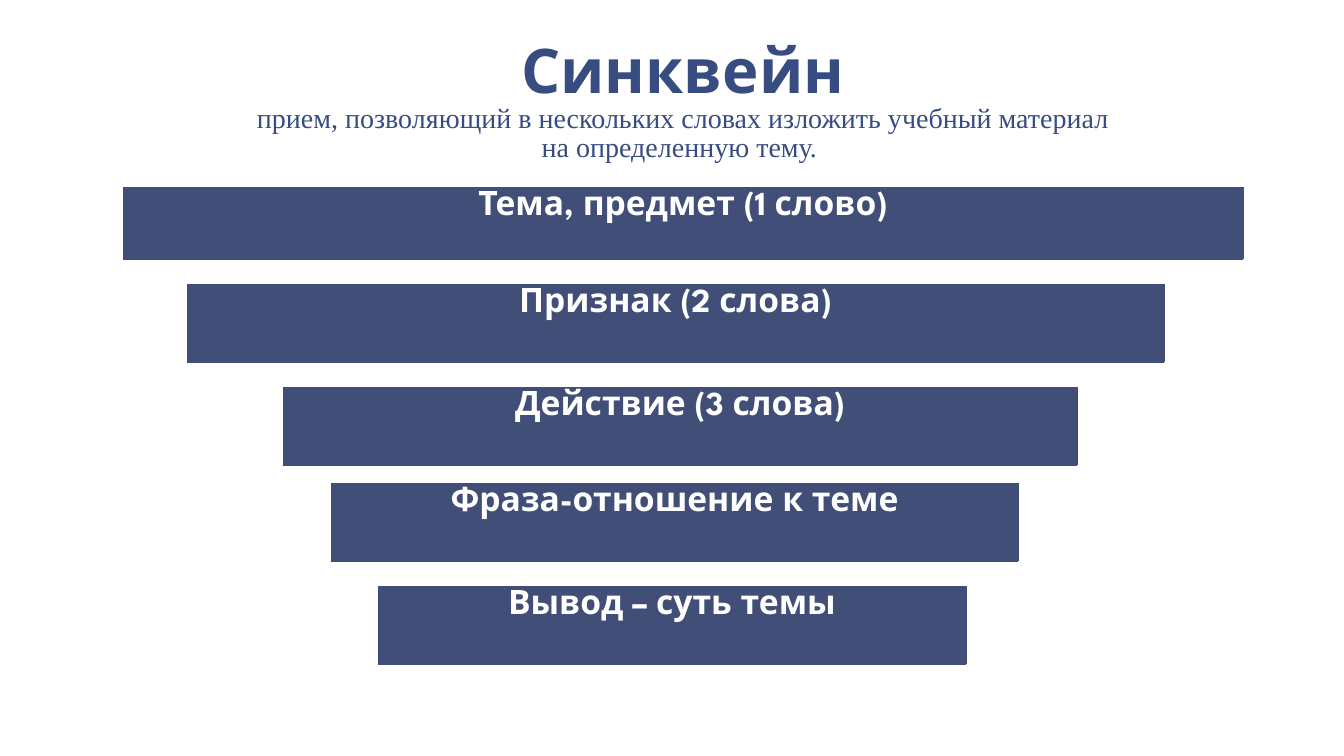
from lxml import etree
from pptx import Presentation
from pptx import util as u
from pptx.dml.color import RGBColor
from pptx.enum import text
from pptx.oxml.ns import qn

PX = 914400 / 100.8
BLUE = RGBColor(0x37, 0x4C, 0x81)
BAR = RGBColor(0x41, 0x4E, 0x77)
BLACK = RGBColor(0, 0, 0)
WHITE = RGBColor(0xFF, 0xFF, 0xFF)
HEAD, BODY = "League Spartan", "Times New Roman"


def px(*values):
    return [u.Emu(round(v * PX)) for v in values]


def add_text(p, txt, font=HEAD, size=24, color=WHITE, bold=True):
    p.alignment = text.PP_ALIGN.CENTER
    for i, line in enumerate(txt.split("\n")):
        if i:
            p.add_line_break()
        if line:
            r = p.add_run()
            r.text = line
            r.font.name, r.font.size, r.font.bold = font, u.Pt(size), bold
            r.font.color.rgb = color


prs = Presentation()
prs.slide_width, prs.slide_height = px(1344, 756)
s = prs.slides.add_slide(prs.slide_layouts[6])
s.background.fill.solid()
s.background.fill.fore_color.rgb = WHITE

# Title and definition
tf = s.shapes.add_textbox(*px(123, 8, 1120, 162)).text_frame
tf.word_wrap = True
tf.vertical_anchor = text.MSO_ANCHOR.BOTTOM
tf.margin_left, tf.margin_right, tf.margin_top, tf.margin_bottom = px(13, 13, 7, 7)
p = tf.paragraphs[0]
p.line_spacing = 0.85
add_text(p, "Синквейн\n", size=44, color=BLUE)
add_text(p, "\u00a0", font=BODY, size=20, color=BLACK)
add_text(p, "прием, позволяющий в нескольких словах изложить учебный материал \n"
            "на определенную тему. ", font=BODY, size=20, color=BLUE, bold=False)

# Narrowing steps, each a one-cell table
steps = [
    ("Тема, предмет (1 слово)", 123, 187, 1120, 72),
    ("Признак (2 слова)", 187, 284, 977, 78),
    ("Действие (3 слова)", 283, 387, 794, 78),
    ("Фраза-отношение к теме", 331, 483, 687, 78),
    ("Вывод – суть темы", 378, 586, 588, 78),
]
for label, *box in steps:
    cell = s.shapes.add_table(1, 1, *px(*box)).table.cell(0, 0)
    add_text(cell.text_frame.paragraphs[0], label)
    # Borders come before the fill in the cell properties
    tcPr = cell._tc.get_or_add_tcPr()
    for side in ("a:lnL", "a:lnR", "a:lnT", "a:lnB"):
        ln = etree.SubElement(tcPr, qn(side), w=str(u.Pt(0.5)))
        solid = etree.SubElement(ln, qn("a:solidFill"))
        etree.SubElement(solid, qn("a:srgbClr"), val=str(BAR))
    cell.fill.solid()
    cell.fill.fore_color.rgb = BAR

prs.save("out.pptx")
